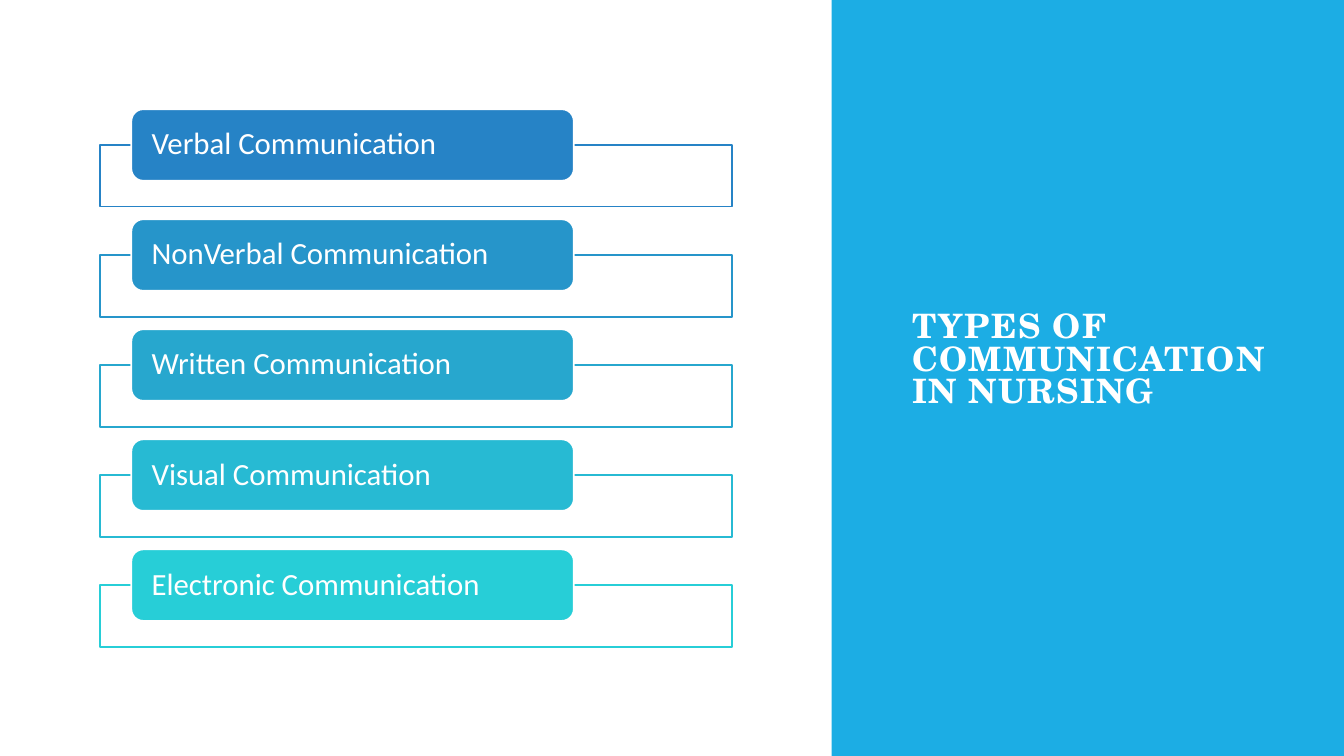
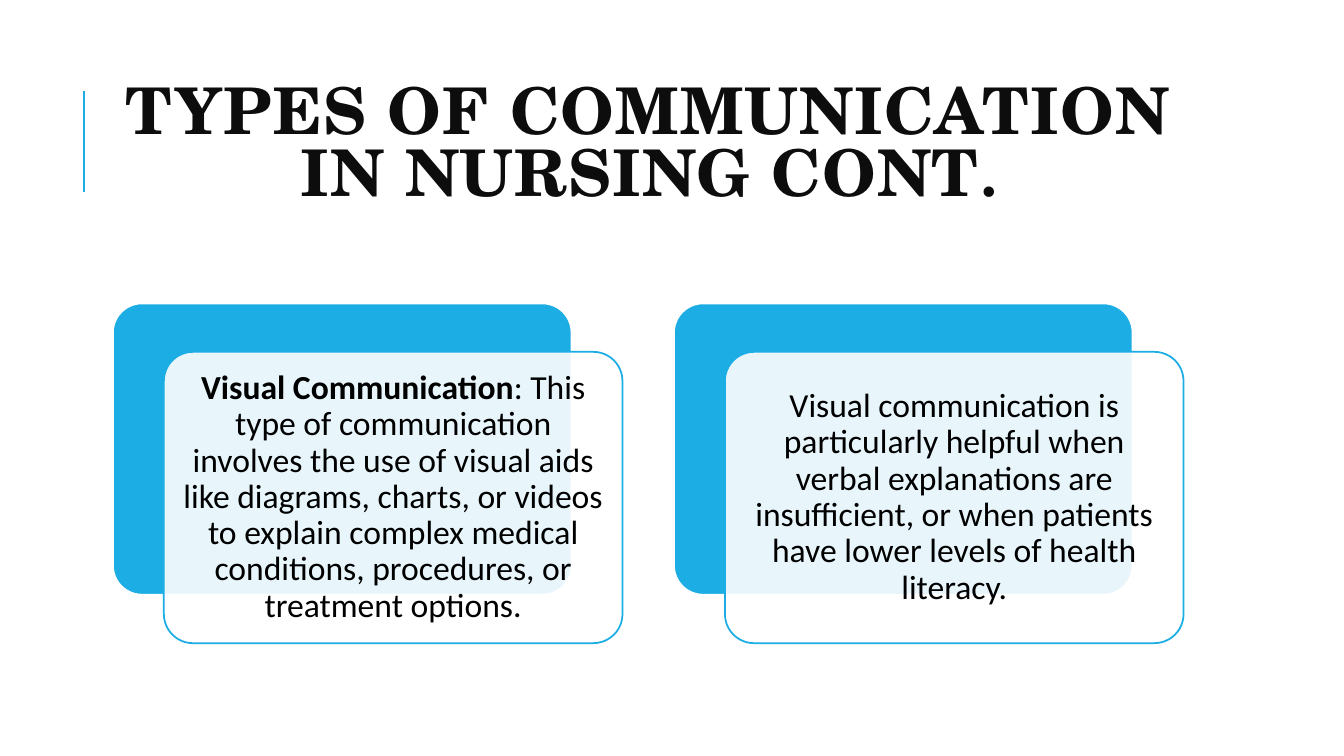
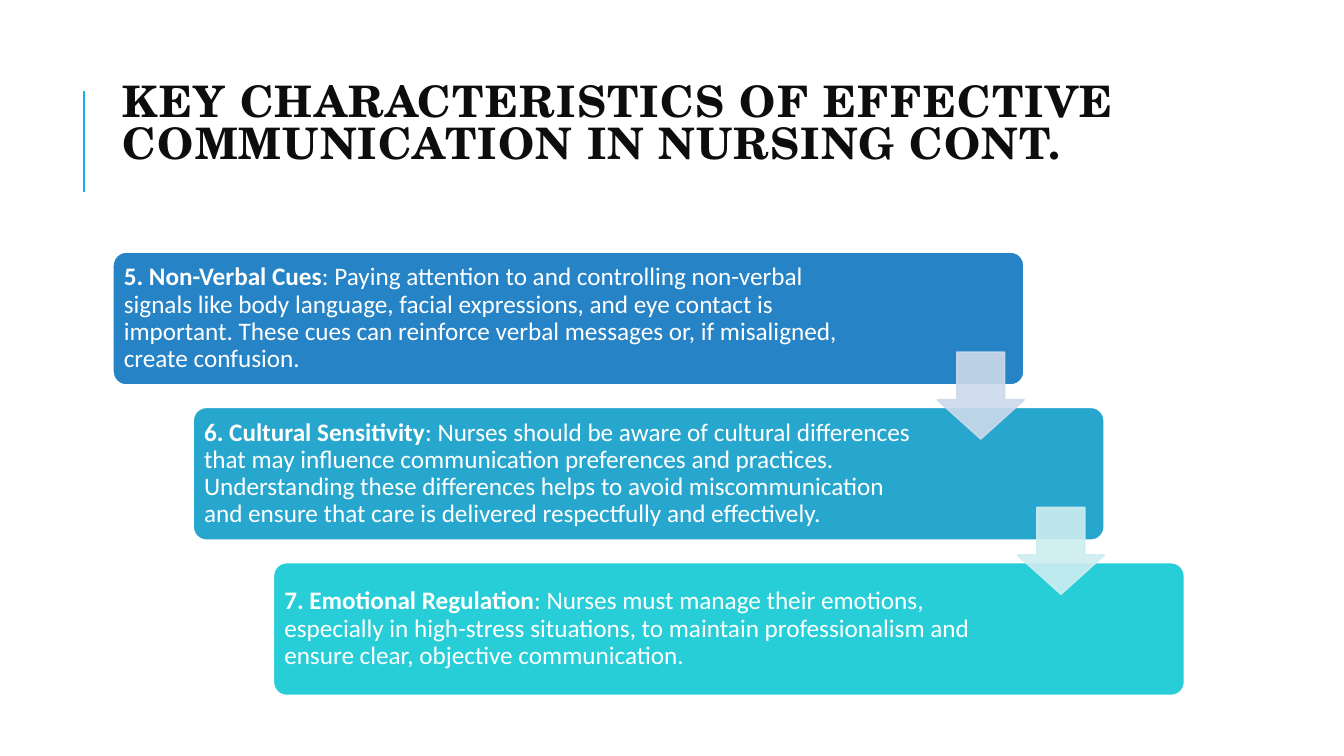
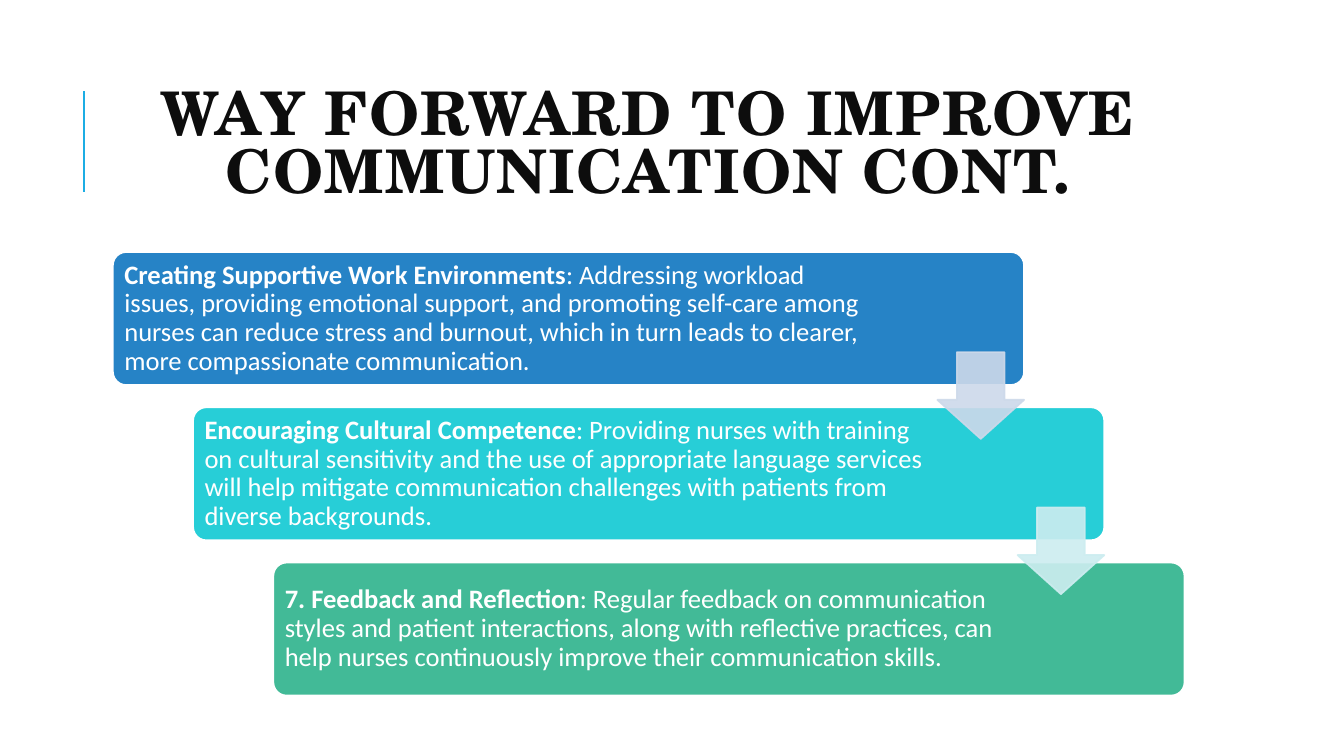
from dataclasses import dataclass

from lxml.etree import SubElement
from pptx import Presentation
from pptx.dml.color import RGBColor
from pptx.enum.shapes import MSO_CONNECTOR, MSO_SHAPE as Shape
from pptx.enum.text import MSO_ANCHOR, MSO_AUTO_SIZE, PP_ALIGN as Align
from pptx.oxml.ns import qn
from pptx.util import Pt


@dataclass(frozen=True)
class Theme:
    white: str = "FFFFFF"
    black: str = "000000"
    ink: str = "0D0D0D"
    accent: str = "1CADE4"
    blue: str = "2683C6"
    sky: str = "27A7CE"
    turquoise: str = "27CED7"
    green: str = "42BA97"
    tabs: tuple = ("2683C6", "2695CA", "27A7CE", "27BAD3", "27CED7")
    arrows: tuple = ("CDD9EA", "CDEDF0")
    title_font: str = "TeX Gyre Schola"
    period_font: str = "Times New Roman"
    body_font: str = "Calibri"
    panel_title: float = 24
    long_title: float = 31
    medium_title: float = 43
    large_title: float = 46
    tab: float = 22
    card: float = 24
    step: float = 18
    large_step: float = 19
    outline: float = 1.25
    rule: float = 1.5
    opacity: int = 90


THEME = Theme()
TITLE_BOX = (80.64, 46.08, 765.36, 118.08)


def write(tf, text, size, color, font=THEME.body_font, bold=False,
          align=Align.LEFT, leading=0.9, spacing=0):
    p = tf.paragraphs[0]
    p.alignment, p.line_spacing = align, leading
    r = p.add_run()
    r.text = text
    r.font.name, r.font.size, r.font.bold = font, Pt(size), bold
    r.font.color.rgb = RGBColor.from_string(color)
    if spacing:
        r.font._element.set("spc", str(spacing * 100))


def paint(fill, color, opacity=100):
    fill.solid()
    fill.fore_color.rgb = RGBColor.from_string(color)
    if opacity < 100:
        for clr in fill._xPr.iter(qn("a:srgbClr")):
            SubElement(clr, qn("a:alpha")).set("val", str(opacity * 1000))


class Deck:
    def __init__(self, theme):
        self.theme = theme
        self.prs = Presentation()
        self.prs.slide_width, self.prs.slide_height = Pt(960), Pt(540)
        self.s = None

    def slide(self):
        self.s = self.prs.slides.add_slide(self.prs.slide_layouts[5])

    def shape(self, kind, box, fill, line=None, opacity=100, line_opacity=100, adj=()):
        sp = self.s.shapes.add_shape(kind, *map(Pt, box))
        sp.shadow.inherit = False
        paint(sp.fill, fill, opacity)
        if line:
            sp.line.width = Pt(self.theme.outline)
            paint(sp.line.fill, line, line_opacity)
        else:
            sp.line.fill.background()
        for i, value in enumerate(adj):
            sp.adjustments[i] = value
        return sp

    def frame(self, sp, left=7.2, top=3.6, right=7.2, bottom=3.6):
        tf = sp.text_frame
        tf.word_wrap, tf.auto_size = True, MSO_AUTO_SIZE.NONE
        tf.vertical_anchor = MSO_ANCHOR.MIDDLE
        tf.margin_left, tf.margin_top = Pt(left), Pt(top)
        tf.margin_right, tf.margin_bottom = Pt(right), Pt(bottom)
        return tf

    def title(self, text, size, box=TITLE_BOX, color=None, align=Align.LEFT,
              lift=0, period=False):
        sp = self.s.shapes.title
        self.s.shapes._spTree.append(sp._element)
        sp.left, sp.top, sp.width, sp.height = map(Pt, box)
        tf = self.frame(sp, bottom=3.6 + lift)
        fmt = dict(size=size, color=color or self.theme.ink, bold=True,
                   align=align, leading=0.8, spacing=1)
        write(tf, text, font=self.theme.title_font, **fmt)
        if period:
            write(tf, ".", font=self.theme.period_font, **fmt)

    def rule(self):
        line = self.s.shapes.add_connector(
            MSO_CONNECTOR.STRAIGHT, Pt(60), Pt(136.8), Pt(60), Pt(64.8))
        line.line.width = Pt(self.theme.rule)
        paint(line.line.fill, self.theme.accent)
        SubElement(line._element.spPr, qn("a:effectLst"))

    def tab(self, text, top, color):
        t = self.theme
        self.shape(Shape.RECTANGLE, (71.28, top + 25.7, 451.44, 43.92),
                   t.white, color, t.opacity)
        sp = self.shape(Shape.ROUNDED_RECTANGLE, (93.8, top, 316.08, 51.12),
                        color, t.white)
        write(self.frame(sp, 12, 0, 12, 0), text, t.tab, t.white)

    def card(self, left, lead, text):
        t = self.theme
        top, w, h = 216.72, 327.6, 208.08
        self.shape(Shape.ROUNDED_RECTANGLE, (left, top, w, h),
                   t.accent, t.white, adj=[0.1])
        sp = self.shape(Shape.ROUNDED_RECTANGLE, (left + 36.4, top + 34.6, w, h),
                        t.white, t.accent, t.opacity, adj=[0.1])
        tf = self.frame(sp, 7.2, 7.2, 7.2, 7.2)
        if lead:
            write(tf, lead, t.card, t.black, bold=True, align=Align.CENTER)
        write(tf, text, t.card, t.black, align=Align.CENTER)

    def staircase(self, steps, size, inset):
        t = self.theme
        w, h, arrow = 650.88, 95.04, 61.92
        corners = [(80.64 + 57.3 * i, 180 + 110.9 * i) for i in range(len(steps))]
        for i, ((x, y), (color, lead, text)) in enumerate(zip(corners, steps)):
            sp = self.shape(Shape.ROUNDED_RECTANGLE, (x, y, w, h),
                            color, t.white, adj=[0.1])
            tf = self.frame(sp, inset, inset, inset + (119.6 if i else 97.2), inset)
            write(tf, lead, size, t.white, bold=True)
            write(tf, text, size, t.white)
        for (x, y), color in zip(corners, t.arrows):
            self.shape(Shape.DOWN_ARROW, (x + w - arrow, y + 71.6, arrow, arrow),
                       color, color, t.opacity, t.opacity, adj=[0.55, 0.45])


def types_slide(deck):
    t = deck.theme
    deck.slide()
    deck.shape(Shape.RECTANGLE, (594, 0, 366, 540), t.accent)
    deck.title("TYPES OF COMMUNICATION IN NURSING", t.panel_title,
               box=(644.4, 50.4, 269.28, 438.48), color=t.white, lift=23)
    kinds = ("Verbal", "NonVerbal", "Written", "Visual", "Electronic")
    for i, (kind, color) in enumerate(zip(kinds, t.tabs)):
        deck.tab(f"{kind} Communication", 78 + 78.6 * i, color)


def visual_slide(deck):
    deck.slide()
    deck.rule()
    deck.title("TYPES OF COMMUNICATION IN NURSING CONT", deck.theme.large_title,
               align=Align.CENTER, period=True)
    deck.card(80.64, "Visual Communication",
              ": This type of communication involves the use of visual aids like "
              "diagrams, charts, or videos to explain complex medical conditions, "
              "procedures, or treatment options.")
    deck.card(481.4, "",
              "Visual communication is particularly helpful when verbal explanations "
              "are insufficient, or when patients have lower levels of health literacy.")


def characteristics_slide(deck):
    t = deck.theme
    deck.slide()
    deck.rule()
    deck.title("KEY CHARACTERISTICS OF EFFECTIVE COMMUNICATION IN NURSING CONT.",
               t.long_title, lift=30)
    deck.staircase([
        (t.blue, "5. Non-Verbal Cues",
         ": Paying attention to and controlling non-verbal signals like body language, "
         "facial expressions, and eye contact is important. These cues can reinforce "
         "verbal messages or, if misaligned, create confusion."),
        (t.sky, "6. Cultural Sensitivity",
         ": Nurses should be aware of cultural differences that may influence "
         "communication preferences and practices. Understanding these differences "
         "helps to avoid miscommunication and ensure that care is delivered "
         "respectfully and effectively."),
        (t.turquoise, "7. Emotional Regulation",
         ": Nurses must manage their emotions, especially in high-stress situations, "
         "to maintain professionalism and ensure clear, objective communication."),
    ], t.step, 5.04)


def way_forward_slide(deck):
    t = deck.theme
    deck.slide()
    deck.rule()
    deck.title("WAY FORWARD TO IMPROVE COMMUNICATION CONT.", t.medium_title,
               align=Align.CENTER)
    deck.staircase([
        (t.blue, "Creating Supportive Work Environments",
         ": Addressing workload issues, providing emotional support, and promoting "
         "self-care among nurses can reduce stress and burnout, which in turn leads "
         "to clearer, more compassionate communication."),
        (t.turquoise, "Encouraging Cultural Competence",
         ": Providing nurses with training on cultural sensitivity and the use of "
         "appropriate language services will help mitigate communication challenges "
         "with patients from diverse backgrounds."),
        (t.green, "7. Feedback and Reflection",
         ": Regular feedback on communication styles and patient interactions, along "
         "with reflective practices, can help nurses continuously improve their "
         "communication skills."),
    ], t.large_step, 5.4)


def main():
    deck = Deck(THEME)
    for build in (types_slide, visual_slide, characteristics_slide, way_forward_slide):
        build(deck)
    deck.prs.save("out.pptx")


if __name__ == "__main__":
    main()
